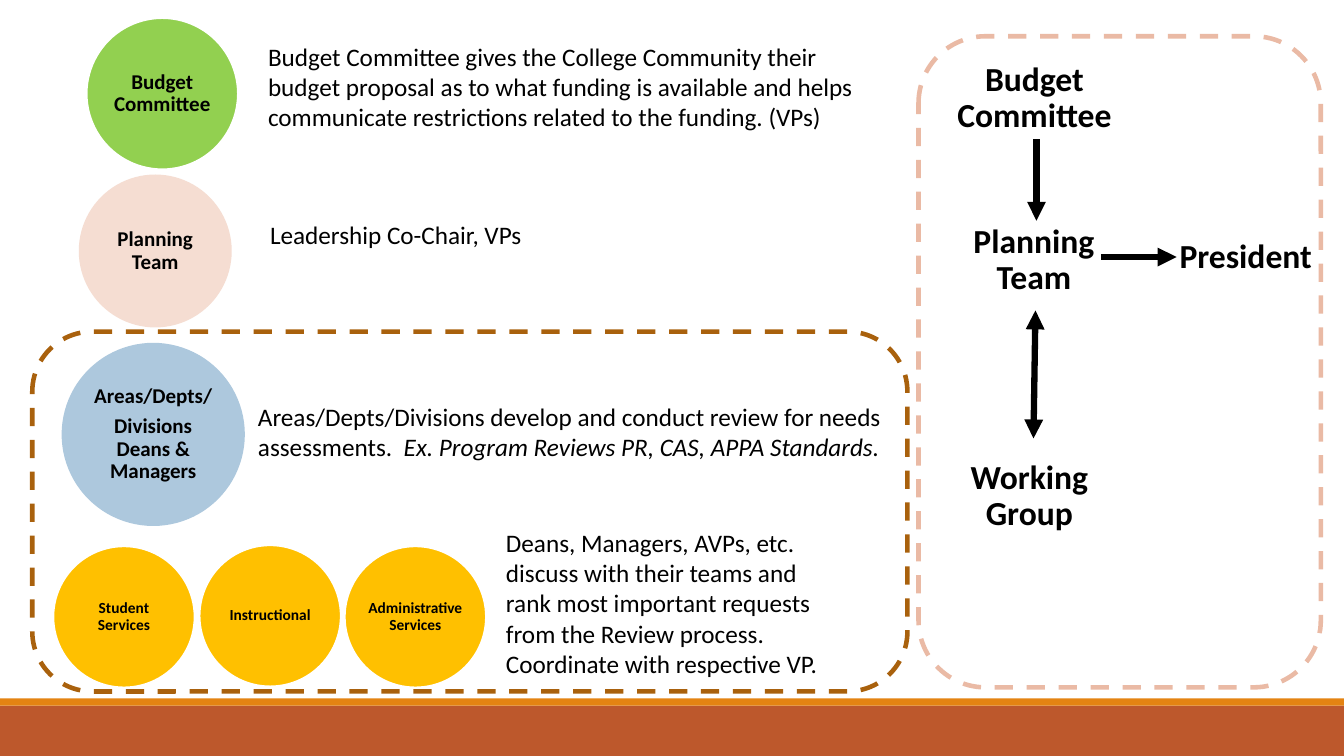
from lxml import etree
from pptx import Presentation
from pptx.dml.color import RGBColor
from pptx.enum.dml import MSO_LINE
from pptx.enum.shapes import MSO_CONNECTOR, MSO_SHAPE
from pptx.enum.text import MSO_ANCHOR, PP_ALIGN
from pptx.oxml.ns import qn
from pptx.util import Inches, Pt

RECT, OVAL, ROUNDED = MSO_SHAPE.RECTANGLE, MSO_SHAPE.OVAL, MSO_SHAPE.ROUNDED_RECTANGLE
STRAIGHT = MSO_CONNECTOR.STRAIGHT
DASH = MSO_LINE.DASH
MIDDLE = MSO_ANCHOR.MIDDLE
CENTER = PP_ALIGN.CENTER

BLACK = RGBColor(0x00, 0x00, 0x00)
WHITE = RGBColor(0xFF, 0xFF, 0xFF)
RUST = RGBColor(0xBD, 0x58, 0x2C)
ORANGE = RGBColor(0xE4, 0x83, 0x12)
GREEN = RGBColor(0x92, 0xD0, 0x50)
BLUE = RGBColor(0xAD, 0xC8, 0xDD)
PEACH = RGBColor(0xF5, 0xDD, 0xD2)
GOLD = RGBColor(0xFF, 0xC0, 0x00)
BROWN = RGBColor(0xA9, 0x61, 0x0D)
SALMON = RGBColor(0xEA, 0xBA, 0xA5)


def add_plain_shape(kind, x, y, w, h, fill=None, line=None, line_width=1.25):
    sp = s.shapes.add_shape(kind, Inches(x), Inches(y), Inches(w), Inches(h))
    sp.shadow.inherit = False
    for part, color in ((sp.fill, fill), (sp.line.fill, line)):
        if color is None:
            part.background()
        else:
            part.solid()
            part.fore_color.rgb = color
    if line is not None:
        sp.line.width = Pt(line_width)
    return sp


def write_text(sp, paragraphs, size, inset=None, centered=False):
    """Fill a shape with paragraphs; centred text is also bold and tightly spaced."""
    tf = sp.text_frame
    tf.word_wrap = True
    if inset is not None:
        tf.margin_left = tf.margin_right = tf.margin_top = tf.margin_bottom = Inches(inset)
    if centered:
        tf.vertical_anchor = MIDDLE
    for i, text in enumerate(paragraphs):
        p = tf.add_paragraph() if i else tf.paragraphs[0]
        p.text = text
        p.font.name = "Calibri"
        p.font.size = Pt(size)
        p.font.color.rgb = BLACK
        if centered:
            p.font.bold = True
            p.alignment = CENTER
            p.line_spacing = 0.9
            if i < len(paragraphs) - 1:
                p.space_after = Pt(size * 0.35)
    return tf


prs = Presentation()
prs.slide_width, prs.slide_height = Inches(13.33), Inches(7.5)
s = prs.slides.add_slide(prs.slide_layouts[6])

# Footer bands
add_plain_shape(RECT, 0, 7, 13.33, 0.5, RUST)
add_plain_shape(RECT, 0, 6.93, 13.33, 0.07, ORANGE)

# Circles: left, top, diameter, fill, outline, font size, text
circles = [
    (0.86, 0.18, 1.5, GREEN, WHITE, 15, ["Budget Committee"]),
    (0.62, 3.41, 1.8, BLUE, BLUE, 15, ["Areas/Depts/", "Divisions Deans & Managers"]),
    (0.79, 1.74, 1.5, PEACH, PEACH, 15, ["Planning Team"]),
    (0.53, 5.42, 1.4, GOLD, WHITE, 11, ["Student Services"]),
    (1.98, 5.41, 1.4, GOLD, WHITE, 11, ["Instructional"]),
    (3.42, 5.42, 1.4, GOLD, WHITE, 11, ["Administrative Services"]),
]
for x, y, d, fill, line, size, text in circles:
    sp = add_plain_shape(OVAL, x, y, d, d, fill, line)
    write_text(sp, text, size, inset=0.02, centered=True)

# Descriptions: left, top, width, height, text, italic ending
descriptions = [
    (2.56, 0.36, 6.29, 1.01, "Budget Committee gives the College Community their budget proposal "
     "as to what funding is available and helps communicate restrictions related to the funding. "
     "(VPs)", ""),
    (2.46, 3.93, 6.88, 0.71, "Areas/Depts/Divisions develop and conduct review for needs "
     "assessments.  ", "Ex. Program Reviews PR, CAS, APPA Standards."),
    (4.92, 5.18, 3.43, 1.62, "Deans, Managers, AVPs, etc. discuss with their teams and rank most "
     "important requests from the Review process. Coordinate with respective VP.", ""),
    (2.58, 2.13, 3.84, 0.4, "Leadership Co-Chair, VPs", ""),
]
for x, y, w, h, text, ending in descriptions:
    sp = s.shapes.add_textbox(Inches(x), Inches(y), Inches(w), Inches(h))
    tf = write_text(sp, [text], 18)
    if ending:
        r = tf.paragraphs[0].add_run()
        r.text = ending
        r.font.italic = True

# Flow labels: left, top, width, text
flow_labels = [
    (9.03, 0.42, 2.46, "Budget Committee"),
    (9.32, 2.03, 1.87, "Planning Team"),
    (9.06, 4.37, 2.3, "Working Group"),
    (11.42, 2, 1.87, "President"),
]
for x, y, w, text in flow_labels:
    sp = s.shapes.add_textbox(Inches(x), Inches(y), Inches(w), Inches(1.11))
    write_text(sp, [text], 24, inset=0.19, centered=True)

# Dashed frames
for x, y, w, h, color in ((0.32, 3.29, 8.68, 3.57, BROWN), (9.11, 0.36, 3.99, 6.46, SALMON)):
    frame = add_plain_shape(ROUNDED, x, y, w, h, line=color, line_width=3.25)
    frame.line.dash_style = DASH

# Arrows: start, end, ends that carry an arrowhead
arrows = [
    (10.28, 1.38, 10.28, 2.19, ["tailEnd"]),
    (10.27, 3.08, 10.25, 4.35, ["headEnd", "tailEnd"]),
    (10.92, 2.55, 11.67, 2.55, ["tailEnd"]),
]
for x1, y1, x2, y2, ends in arrows:
    arrow = s.shapes.add_connector(STRAIGHT, Inches(x1), Inches(y1), Inches(x2), Inches(y2))
    arrow.line.color.rgb = BLACK
    arrow.line.width = Pt(4.5)
    ln = arrow.line._get_or_add_ln()
    for end in ends:
        etree.SubElement(ln, qn("a:" + end), type="triangle")
    etree.SubElement(arrow._element.spPr, qn("a:effectLst"))

prs.save("out.pptx")
